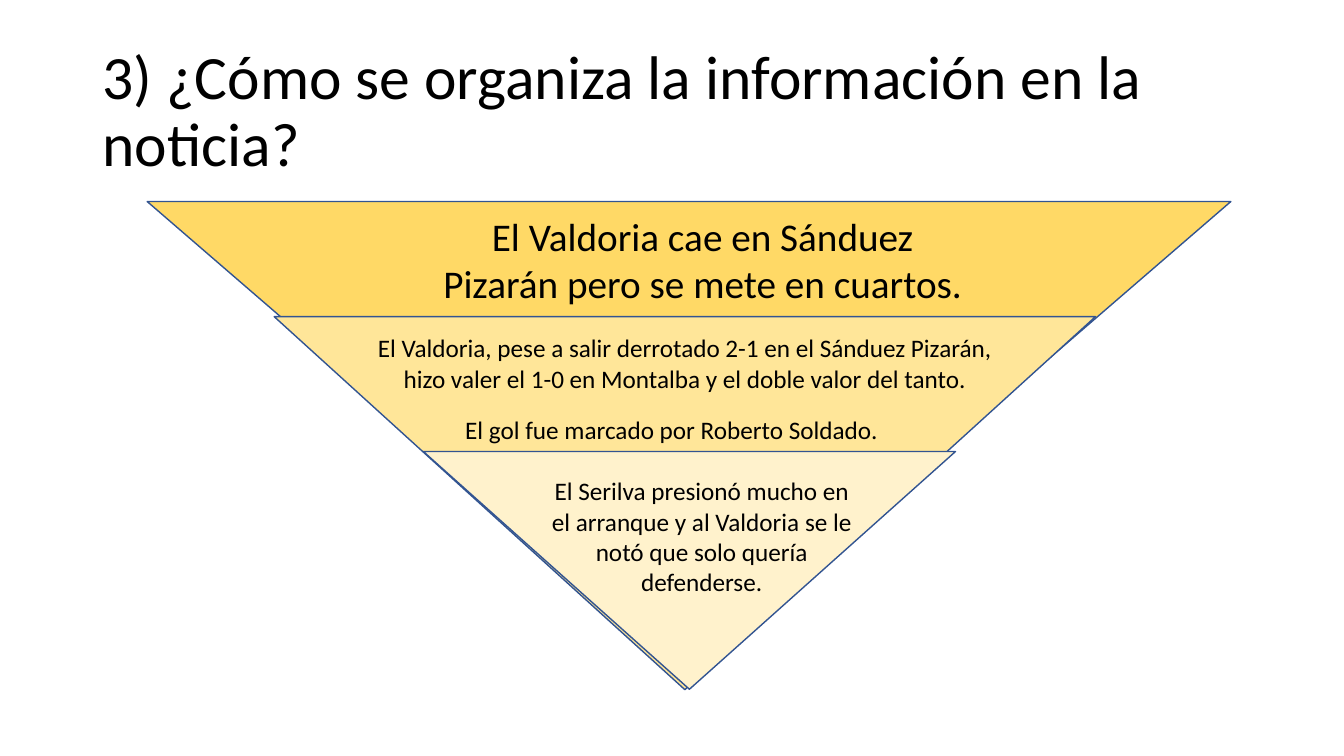
"""Build a slide showing a news story as an inverted pyramid."""
from pptx import Presentation
from pptx.dml.color import RGBColor
from pptx.enum.shapes import MSO_SHAPE as Shape
from pptx.enum.text import MSO_ANCHOR as Anchor, MSO_AUTO_SIZE as Auto, PP_ALIGN as Align
from pptx.util import Cm, Pt


def paint(color, tone):
    color.rgb = RGBColor.from_string(tone)


def write(frame, text, size, align):
    para = frame.paragraphs[0]
    para.alignment = align
    run = para.add_run()
    run.text = text
    run.font.size = Pt(size)
    run.font.name = "Calibri"
    paint(run.font.color, "000000")
    return para


deck = Presentation()
deck.slide_width, deck.slide_height = Cm(33.87), Cm(19.05)
slide = deck.slides.add_slide(deck.slide_layouts[5])

title = slide.shapes.title
title.left, title.top, title.width, title.height = Cm(2.33), Cm(1.01), Cm(29.21), Cm(3.68)
frame = title.text_frame
frame.word_wrap = True
frame.auto_size = Auto.NONE
frame.vertical_anchor = Anchor.MIDDLE
para = write(frame, "3) ¿Cómo se organiza la información en la noticia?", 44, Align.LEFT)
para.line_spacing = 0.9

tiers = [
    ((3.71, 5.08, 27.31, 11.79), "FFD966"),
    ((6.91, 7.98, 20.7, 9.4), "FFE699"),
    ((10.67, 11.38, 13.41, 5.99), "FFF2CC"),
]
for place, tone in tiers:
    tier = slide.shapes.add_shape(Shape.ISOSCELES_TRIANGLE, *map(Cm, place))
    tier._element.spPr.xfrm.set("flipV", "1")
    tier.shadow.inherit = False
    tier.fill.solid()
    paint(tier.fill.fore_color, tone)
    tier.line.width = Pt(1)
    paint(tier.line.color, "325491")

notes = [
    ((10.9, 5.23, 13.61, 2.64), 28, True,
     "El Valdoria cae en Sánduez Pizarán pero se mete en cuartos."),
    ((8.79, 8.26, 16.94, 1.8), 18, True,
     "El Valdoria, pese a salir derrotado 2-1 en el Sánduez Pizarán, "
     "hizo valer el 1-0 en Montalba y el doble valor del tanto."),
    ((11.4, 10.31, 11.05, 1.02), 18, False,
     "El gol fue marcado por Roberto Soldado."),
    ((13.61, 11.86, 8.15, 3.33), 18, True,
     "El Serilva presionó mucho en el arranque y al Valdoria se le notó "
     "que solo quería defenderse."),
]
for place, size, wrap, text in notes:
    frame = slide.shapes.add_textbox(*map(Cm, place)).text_frame
    frame.word_wrap = wrap
    frame.auto_size = Auto.SHAPE_TO_FIT_TEXT
    write(frame, text, size, Align.CENTER)

deck.save("out.pptx")
